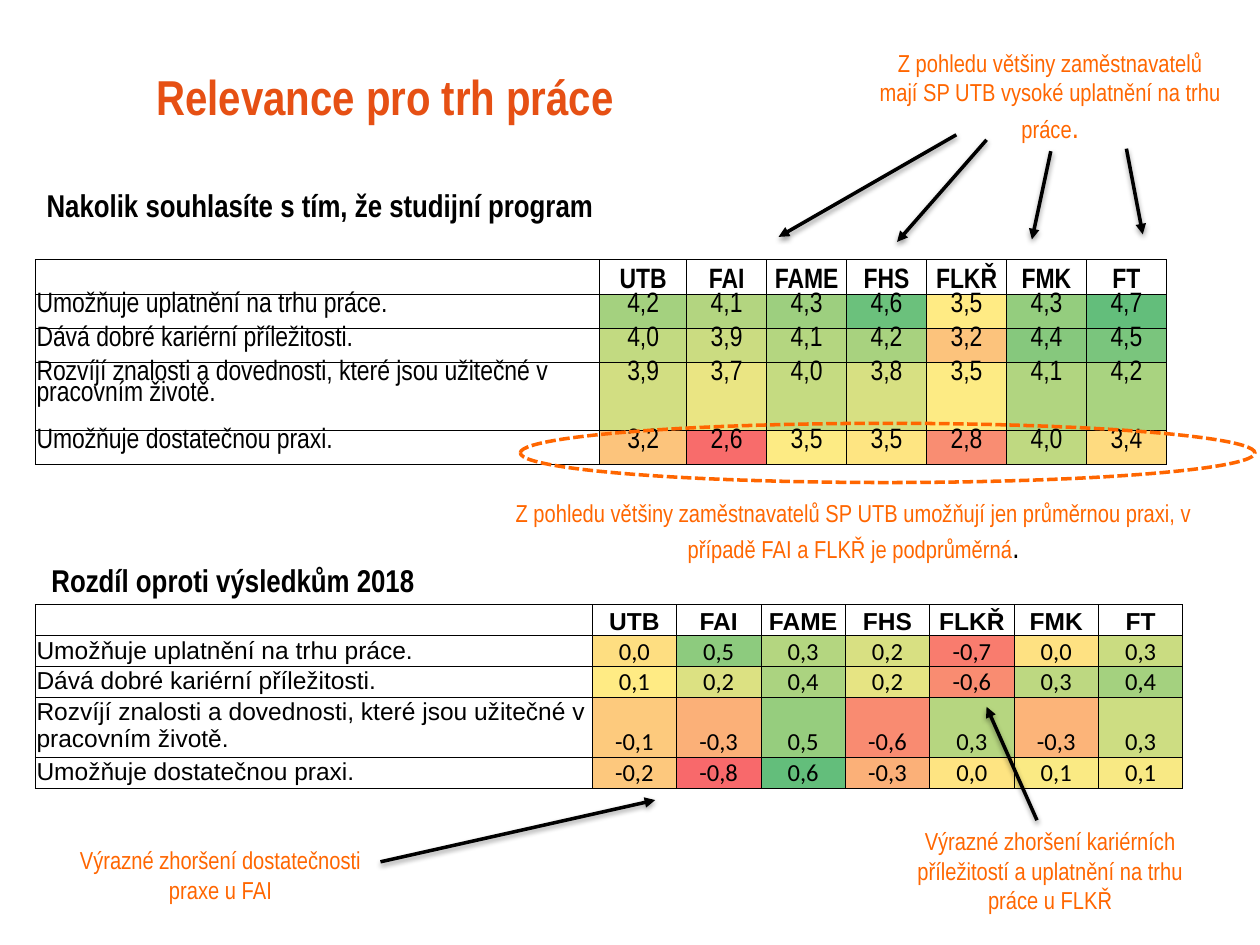
from dataclasses import dataclass

from lxml.etree import SubElement
from pptx import Presentation
from pptx.dml.color import RGBColor
from pptx.enum.dml import MSO_LINE
from pptx.enum.shapes import MSO_CONNECTOR, MSO_SHAPE
from pptx.enum.text import MSO_ANCHOR, MSO_AUTO_SIZE, PP_ALIGN
from pptx.oxml.ns import qn
from pptx.util import Inches, Pt


@dataclass(frozen=True)
class Theme:
    title: str = "E65014"
    accent: str = "FF6600"
    black: str = "000000"
    narrow: str = "Arial Narrow"
    title_size: int = 28
    heading_size: int = 18
    note_size: int = 14


THEME = Theme()

FACULTIES = ["UTB", "FAI", "FAME", "FHS", "FLKŘ", "FMK", "FT"]
STATEMENTS = [
    "Umožňuje uplatnění na trhu práce.",
    "Dává dobré kariérní příležitosti.",
    "Rozvíjí znalosti a dovednosti, které jsou užitečné v pracovním životě.",
    "Umožňuje dostatečnou praxi.",
]
# One line per statement: value and heat colour for each faculty
RATINGS = [
    "4,2 A4D17F 4,1 B3D580 4,3 9DCF7F 4,6 6BC17C 3,5 FFEB84 4,3 94CD7E 4,7 63BE7B",
    "4,0 C2DA81 3,9 CBDC81 4,1 B4D680 4,2 A8D27F 3,2 FCC37C 4,4 86C87D 4,5 7AC57D",
    "3,9 D2DE82 3,7 EAE583 4,0 C5DB81 3,8 D7E082 3,5 FDEB84 4,1 B1D580 4,2 A9D380",
    "3,2 FCC47C 2,6 F86C6B 3,5 FDEB84 3,5 FEE582 2,8 F98D72 4,0 BFD981 3,4 FEDB80",
]
CHANGES = [
    "0,0 FEDE81 0,5 8DCB7E 0,3 B4D680 0,2 D8E082 -0,7 F97C6E 0,0 FEE182 0,3 CADC81",
    "0,1 FFEB84 0,2 DCE182 0,4 ABD380 0,2 E6E483 -0,6 F98C71 0,3 BDD881 0,4 A4D17F",
    "-0,1 FDCA7D -0,3 FBB078 0,5 96CD7E -0,6 F98B71 0,3 B6D680 -0,3 FCB479 0,3 CDDD82",
    "-0,2 FDC87D -0,8 F8696B 0,6 63BE7B -0,3 FBB078 0,0 FEE482 0,1 FAEA84 0,1 F8E984",
]


def add_text(p, text, size=THEME.note_size, font=THEME.narrow,
             color=THEME.black, bold=False, align=PP_ALIGN.CENTER):
    """Add one formatted run to a paragraph."""
    p.alignment = align
    r = p.add_run()
    r.text = text
    r.font.size = Pt(size)
    r.font.name = font
    r.font.bold = bold
    r.font.color.rgb = RGBColor.from_string(color)


def add_box(s, box, text, **fmt):
    """Add a wrapping text box and return its paragraph."""
    tf = s.shapes.add_textbox(*map(Inches, box)).text_frame
    tf.word_wrap = True
    tf.auto_size = MSO_AUTO_SIZE.SHAPE_TO_FIT_TEXT
    add_text(tf.paragraphs[0], text, **fmt)
    return tf.paragraphs[0]


def set_borders(cell):
    tc_pr = cell._tc.get_or_add_tcPr()
    for index, side in enumerate(("lnL", "lnR", "lnT", "lnB")):
        ln = tc_pr.makeelement(qn(f"a:{side}"), {"w": str(Pt(0.5))})
        fill = SubElement(ln, qn("a:solidFill"))
        SubElement(fill, qn("a:srgbClr"), val=THEME.black)
        tc_pr.insert(index, ln)


def fill_cell(cell, text, fill=None, anchor=MSO_ANCHOR.TOP, spacing=None, **fmt):
    cell.margin_left = cell.margin_right = cell.margin_top = Inches(0.01)
    cell.margin_bottom = 0
    cell.vertical_anchor = anchor
    if fill:
        cell.fill.solid()
        cell.fill.fore_color.rgb = RGBColor.from_string(fill)
    else:
        cell.fill.background()
    set_borders(cell)
    p = cell.text_frame.paragraphs[0]
    if spacing:
        p.line_spacing = spacing
    if text:
        add_text(p, text, **fmt)
    else:  # keeps the empty corner cell from stretching its row
        p._p.get_or_add_endParaRPr().set("sz", str(fmt["size"] * 100))


def add_heat_table(s, left, top, widths, row_height, rows, size, font,
                   value_font, value_anchor, spacing=None):
    heights = [row_height * n for n in (1, 1, 1, 2, 1)]
    table = s.shapes.add_table(
        len(heights), len(widths), Inches(left), Inches(top),
        Inches(sum(widths)), Inches(sum(heights))).table
    table.first_row = table.horz_banding = False
    for column, width in zip(table.columns, widths):
        column.width = Inches(width)
    for row, height in zip(table.rows, heights):
        row.height = Inches(height)

    for c, name in enumerate([""] + FACULTIES):
        fill_cell(table.cell(0, c), name, anchor=MSO_ANCHOR.BOTTOM,
                  size=size, font=font, bold=True)
    for r, (statement, line) in enumerate(zip(STATEMENTS, rows), 1):
        fill_cell(table.cell(r, 0), statement, spacing=spacing,
                  size=size, font=font, align=PP_ALIGN.LEFT)
        parts = line.split()
        for c, (value, fill) in enumerate(zip(parts[::2], parts[1::2]), 1):
            fill_cell(table.cell(r, c), value, fill=fill, anchor=value_anchor,
                      spacing=spacing, size=size, font=value_font)


def add_arrow(s, start, end):
    line = s.shapes.add_connector(
        MSO_CONNECTOR.STRAIGHT, *map(Inches, start + end))
    line.line.width = Pt(2)
    line.line.color.rgb = RGBColor.from_string(THEME.black)
    SubElement(line.line._get_or_add_ln(), qn("a:tailEnd"), type="triangle")
    # Soft shadow straight below the arrow
    effects = SubElement(line._element.spPr, qn("a:effectLst"))
    shadow = SubElement(effects, qn("a:outerShdw"), blurRad=str(Pt(3.1)),
                        dist=str(Pt(1.6)), dir="5400000", rotWithShape="0")
    color = SubElement(shadow, qn("a:srgbClr"), val=THEME.black)
    SubElement(color, qn("a:alpha"), val="38000")


def add_highlight(s, box):
    sp = s.shapes.add_shape(MSO_SHAPE.OVAL, *map(Inches, box))
    sp.shadow.inherit = False
    sp.fill.background()
    sp.line.color.rgb = RGBColor.from_string(THEME.accent)
    sp.line.width = Pt(2)
    sp.line.dash_style = MSO_LINE.SQUARE_DOT


def add_title(s, text):
    title = s.shapes.title
    title.left, title.top, title.width, title.height = map(
        Inches, (1.14, 0.36, 8.11, 0.81))
    title.text_frame.vertical_anchor = MSO_ANCHOR.MIDDLE
    add_text(title.text_frame.paragraphs[0], text, size=THEME.title_size,
             color=THEME.title, bold=True, align=PP_ALIGN.LEFT)


def main():
    prs = Presentation()
    prs.slide_width, prs.slide_height = Inches(10), Inches(7.5)
    s = prs.slides.add_slide(prs.slide_layouts[5])
    add_title(s, "Relevance pro\u00a0trh práce")

    # Headings and tables
    heading = dict(size=THEME.heading_size, bold=True)
    add_box(s, (0.04, 1.43, 5, 0.4),
            "Nakolik souhlasíte s tím, že studijní program", **heading)
    add_heat_table(s, 0.28, 2.06, [4.48, 0.69] + [0.635] * 6, 0.27, RATINGS,
                   16, THEME.narrow, THEME.narrow, MSO_ANCHOR.TOP, spacing=0.8)
    add_heat_table(s, 0.28, 4.8, [4.42] + [0.67] * 7, 0.24, CHANGES,
                   14, "Arial", "Calibri", MSO_ANCHOR.BOTTOM)
    add_box(s, (-0.65, 4.4, 5, 0.4), "Rozdíl oproti výsledkům 2018", **heading)

    # Comments
    add_highlight(s, (4.13, 3.36, 5.83, 0.47))
    note = dict(color=THEME.accent)
    p = add_box(s, (3.98, 3.9, 5.59, 0.64),
                "Z pohledu většiny zaměstnavatelů SP UTB umožňují jen průměrnou "
                "praxi, v případě FAI a FLKŘ je podprůměrná", **note)
    add_text(p, ".", size=THEME.heading_size)
    add_box(s, (0.48, 6.66, 2.54, 0.57),
            "Výrazné zhoršení dostatečnosti praxe u FAI", **note)
    add_box(s, (6.97, 6.51, 2.73, 0.81),
            "Výrazné zhoršení kariérních příležitostí a uplatnění na trhu "
            "práce u FLKŘ", **note)
    p = add_box(s, (6.86, 0.33, 2.95, 0.88),
                "Z pohledu většiny zaměstnavatelů mají SP UTB vysoké uplatnění "
                "na trhu práce", **note)
    add_text(p, ".", size=THEME.heading_size, **note)

    # Arrows from comments to table cells
    for start, end in [
        ((3.02, 6.84), (5.2, 6.35)),
        ((8.23, 6.51), (7.83, 5.61)),
        ((7.83, 1.11), (7.12, 1.92)),
        ((8.94, 1.18), (9.07, 1.86)),
        ((8.34, 1.2), (8.19, 1.9)),
        ((7.59, 1.07), (6.18, 1.88)),
    ]:
        add_arrow(s, start, end)

    prs.save("out.pptx")


if __name__ == "__main__":
    main()
